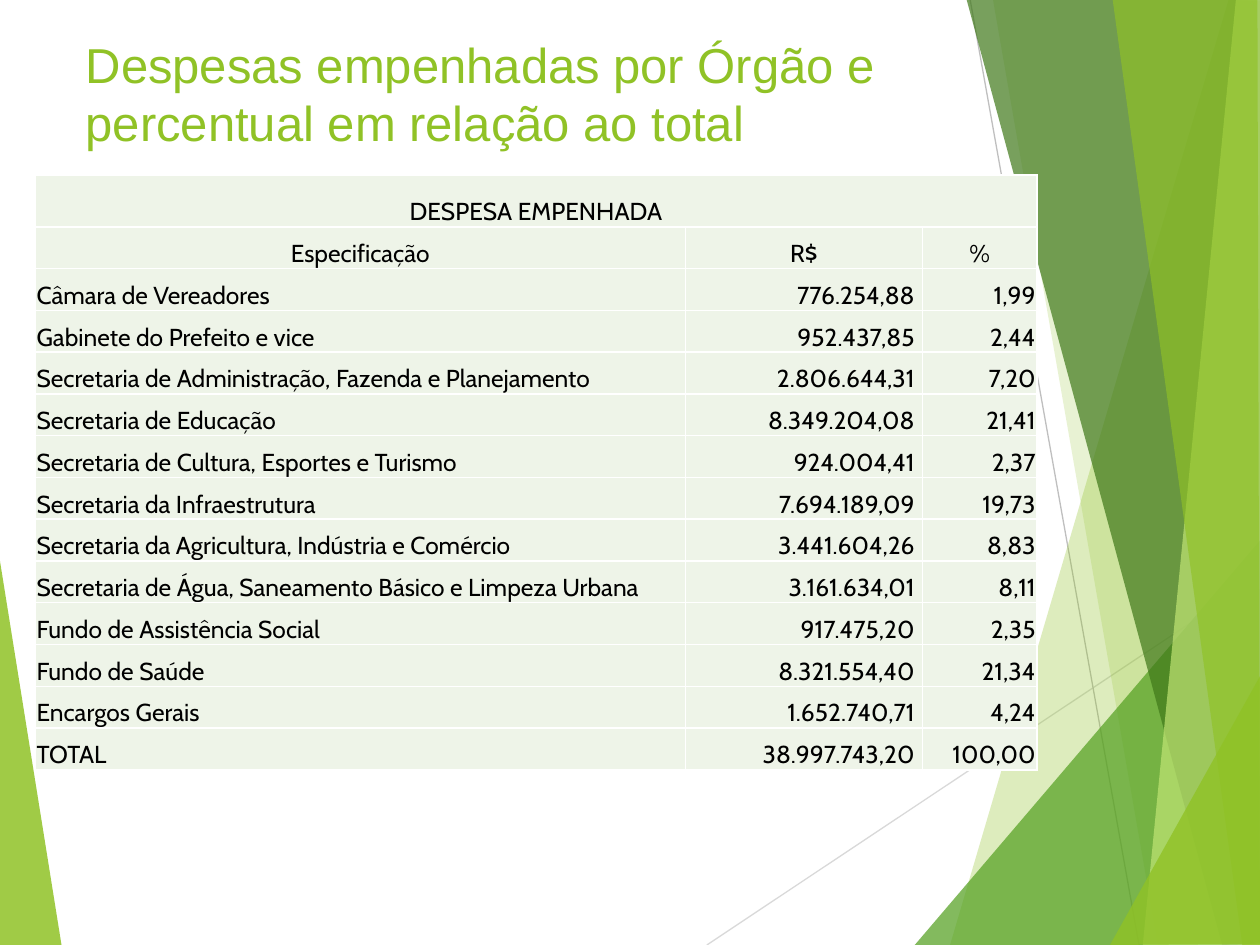
from lxml import etree
from pptx import Presentation
from pptx import util as u
from pptx.dml.color import RGBColor
from pptx.enum import shapes, text
from pptx.oxml.ns import qn

COLORS = {
    "lime": "90C226", "green": "54A021", "forest": "3F7819", "pale": "C0E474",
    "light_gray": "D9D9D9", "gray": "BFBFBF",
    "cell": "EEF4E8", "white": "FFFFFF", "black": "000000",
}
TITLE = "Despesas empenhadas por Órgão e percentual em relação ao total"

# Decorative facets: colour, opacity in percent, corner points in inches
LEFT_FACET = ("lime", 85, [(-0.01, 4.39), (0.49, 7.51), (-0.01, 7.5)])
RIGHT_FACETS = [
    ("lime", 30, [(9.75, 0), (7.54, 7.5), (10.02, 7.51), (10.01, 0.01)]),
    ("lime", 20, [(7.88, -0.01), (9.19, 7.5), (10.01, 7.5), (10.01, -0.01)]),
    ("green", 72, [(7.26, 7.5), (10, 4.29), (10.01, 7.5)]),
    ("forest", 70, [(7.67, -0.01), (9.7, 7.5), (10.01, 7.49), (10.01, -0.01)]),
    ("pale", 70, [(9.81, -0.01), (9.07, 7.5), (10.01, 7.5), (10, -0.01)]),
    ("lime", 65, [(8.83, -0.01), (9.86, 7.5), (10, 7.5), (9.98, -0.01)]),
    ("lime", 80, [(8.81, 7.5), (10.01, 5.35), (10.01, 7.49)]),
]
LINES = [("light_gray", (5.61, 7.5), (10.01, 4.57)),
         ("gray", (7.7, 0), (9.04, 7.5))]

TABLE_TITLE = "DESPESA EMPENHADA"
HEADER = ("Especificação", "R$", "%")
EXPENSES = [
    ("Câmara de Vereadores", "776.254,88", "1,99"),
    ("Gabinete do Prefeito e vice", "952.437,85", "2,44"),
    ("Secretaria de Administração, Fazenda e Planejamento", "2.806.644,31", "7,20"),
    ("Secretaria de Educação", "8.349.204,08", "21,41"),
    ("Secretaria de Cultura, Esportes e Turismo", "924.004,41", "2,37"),
    ("Secretaria da Infraestrutura", "7.694.189,09", "19,73"),
    ("Secretaria da Agricultura, Indústria e Comércio", "3.441.604,26", "8,83"),
    ("Secretaria de Água, Saneamento Básico e Limpeza Urbana", "3.161.634,01", "8,11"),
    ("Fundo de Assistência Social", "917.475,20", "2,35"),
    ("Fundo de Saúde", "8.321.554,40", "21,34"),
    ("Encargos Gerais", "1.652.740,71", "4,24"),
    ("TOTAL", "38.997.743,20", "100,00"),
]
COLUMN_WIDTHS = (5.16, 1.88, 0.91)
TABLE_HEIGHT, TITLE_ROW_HEIGHT = 4.72, 0.41


def rgb(name):
    return RGBColor.from_string(COLORS[name])


def add_run(paragraph, words, font, size, color):
    run = paragraph.add_run()
    run.text = words
    run.font.name = font
    run.font.size = u.Pt(size)
    run.font.color.rgb = rgb(color)


def add_facet(slide, color, opacity, points):
    corners = [(u.Inches(x), u.Inches(y)) for x, y in points]
    builder = slide.shapes.build_freeform(*corners[0])
    builder.add_line_segments(corners[1:], close=True)
    shape = builder.convert_to_shape()
    shape.shadow.inherit = False
    shape.fill.solid()
    shape.fill.fore_color.rgb = rgb(color)
    shape.line.fill.background()
    fill_color = shape.element.spPr.find(qn("a:solidFill"))[0]
    etree.SubElement(fill_color, qn("a:alpha"), val=str(opacity * 1000))


def add_line(slide, color, start, end):
    ends = [u.Inches(value) for value in start + end]
    connector = slide.shapes.add_connector(shapes.MSO_CONNECTOR.STRAIGHT, *ends)
    connector.line.color.rgb = rgb(color)
    connector.line.width = u.Pt(0.75)
    etree.SubElement(connector.element.spPr, qn("a:effectLst"))


def add_title(slide):
    title = slide.shapes.title
    title.left, title.top = u.Inches(0.58), u.Inches(0.22)
    title.width, title.height = u.Inches(7.65), u.Inches(1.17)
    frame = title.text_frame
    frame.word_wrap = True
    frame.vertical_anchor = text.MSO_ANCHOR.TOP
    paragraph = frame.paragraphs[0]
    paragraph.alignment = text.PP_ALIGN.LEFT
    add_run(paragraph, TITLE, "Arial", 28, "lime")
    slide.shapes.element.append(title.element)  # in front of the facets


def format_cell(cell):
    properties = cell._tc.get_or_add_tcPr()
    for side in "LRTB":
        border = etree.SubElement(properties, qn(f"a:ln{side}"), w=str(u.Pt(1)))
        fill = etree.SubElement(border, qn("a:solidFill"))
        etree.SubElement(fill, qn("a:srgbClr"), val=COLORS["white"])
    cell.fill.solid()
    cell.fill.fore_color.rgb = rgb("cell")
    cell.vertical_anchor = text.MSO_ANCHOR.BOTTOM
    cell.margin_left = cell.margin_right = cell.margin_top = u.Inches(0.01)
    cell.margin_bottom = 0


def write_cell(cell, words, alignment):
    paragraph = cell.text_frame.paragraphs[0]
    paragraph.alignment = alignment
    add_run(paragraph, words, "Cabin", 14, "black")


def add_expense_table(slide):
    row_count = len(EXPENSES) + 2
    table = slide.shapes.add_table(
        row_count, len(COLUMN_WIDTHS), u.Inches(0.28), u.Inches(1.39),
        u.Inches(sum(COLUMN_WIDTHS)), u.Inches(TABLE_HEIGHT)).table
    for column, width in zip(table.columns, COLUMN_WIDTHS):
        column.width = u.Inches(width)
    row_height = (TABLE_HEIGHT - TITLE_ROW_HEIGHT) / (row_count - 1)
    for index, row in enumerate(table.rows):
        row.height = u.Inches(row_height if index else TITLE_ROW_HEIGHT)
    for cell in table.iter_cells():
        format_cell(cell)

    # Heading rows
    align = text.PP_ALIGN
    table.cell(0, 0).merge(table.cell(0, 2))
    write_cell(table.cell(0, 0), TABLE_TITLE, align.CENTER)
    for column, words in enumerate(HEADER):
        write_cell(table.cell(1, column), words, align.CENTER)

    # Expense rows
    for row, expense in enumerate(EXPENSES, start=2):
        for column, words in enumerate(expense):
            write_cell(table.cell(row, column), words,
                       align.RIGHT if column else align.LEFT)
        table.cell(row, 1).margin_right = u.Inches(0.06)


def main():
    presentation = Presentation()
    presentation.slide_width = u.Inches(10)
    presentation.slide_height = u.Inches(7.5)
    slide = presentation.slides.add_slide(presentation.slide_layouts[5])

    # Background decoration
    add_facet(slide, *LEFT_FACET)
    for line in LINES:
        add_line(slide, *line)
    for facet in RIGHT_FACETS:
        add_facet(slide, *facet)

    # Content
    add_title(slide)
    add_expense_table(slide)
    presentation.save("out.pptx")


if __name__ == "__main__":
    main()
